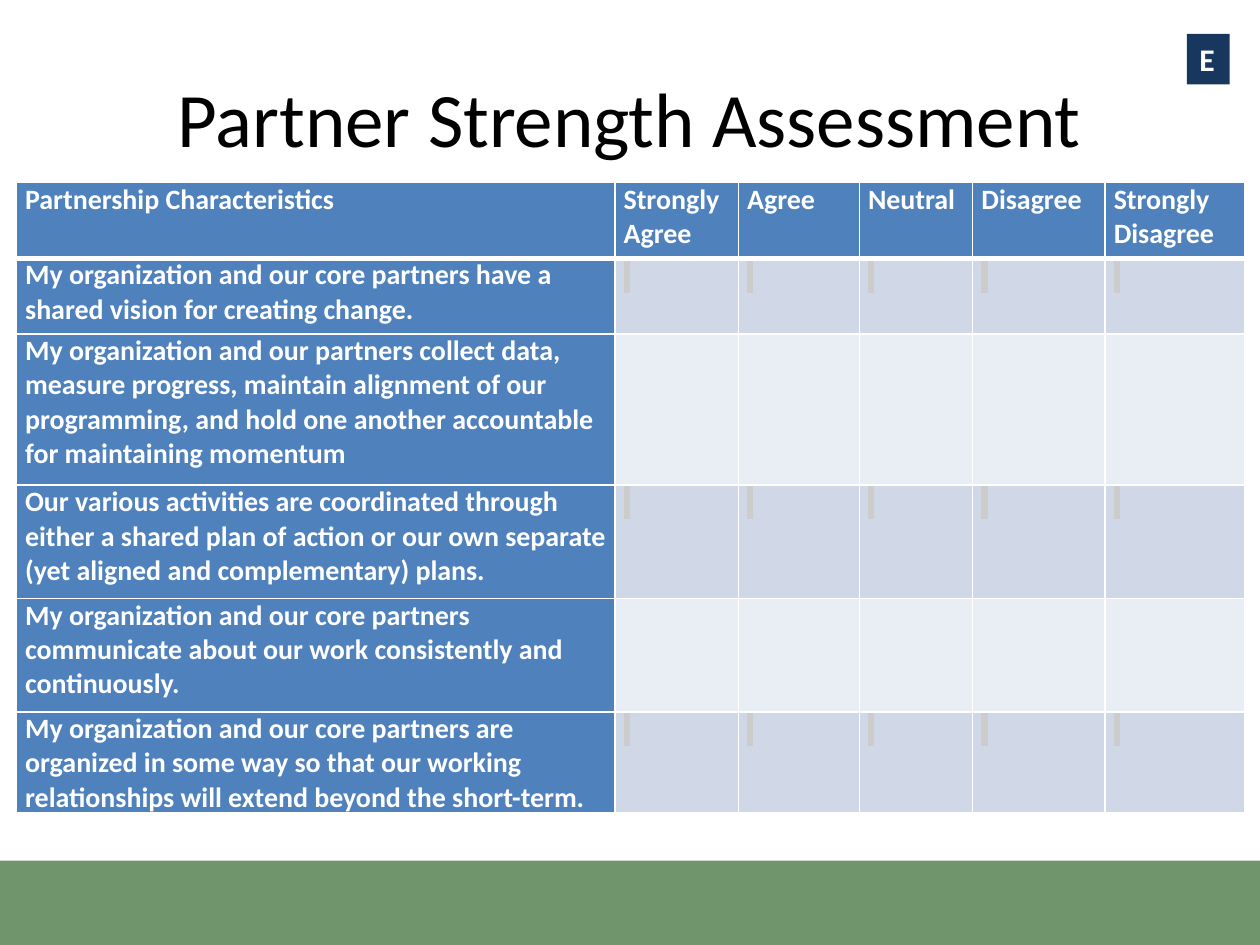
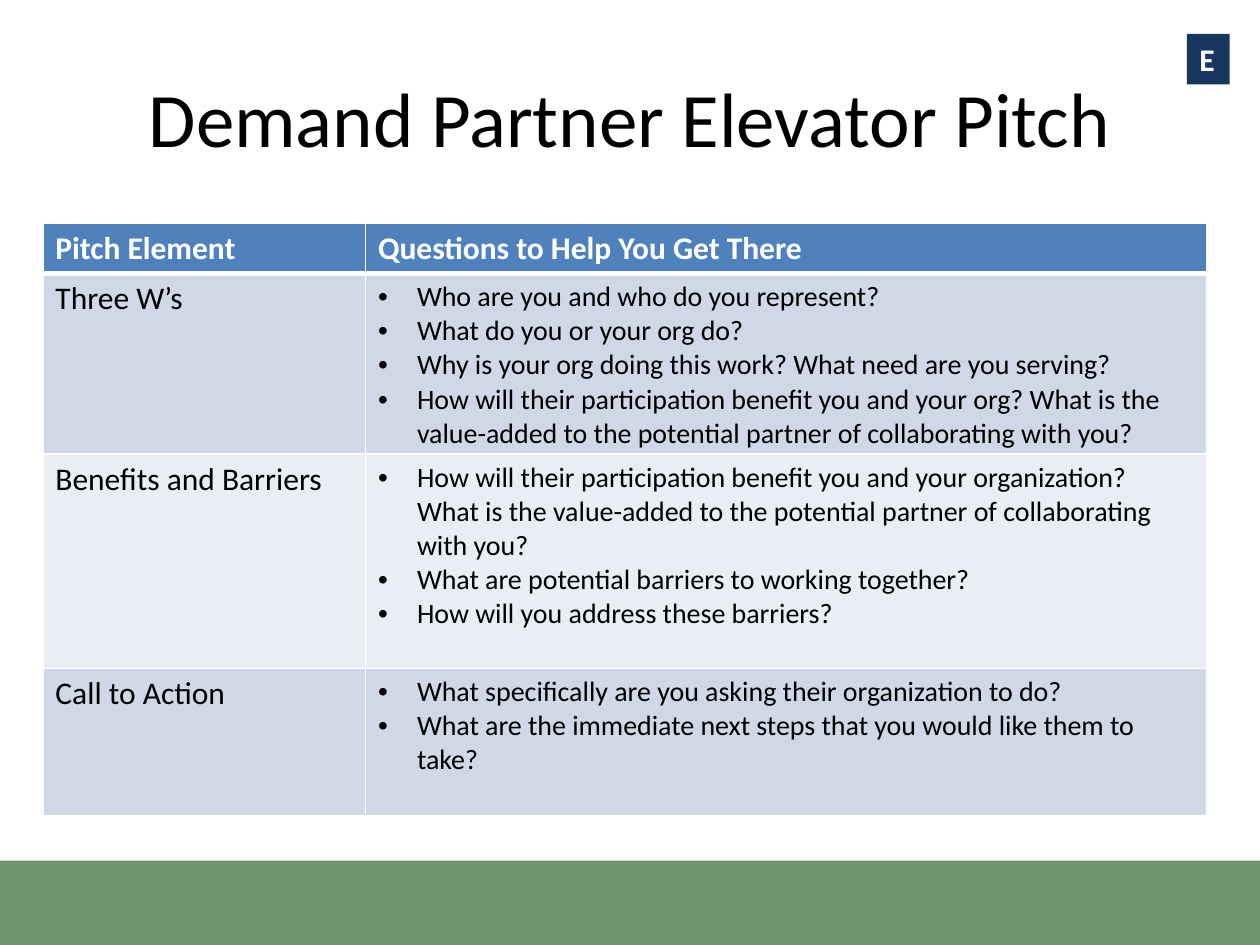
import dataclasses

import lxml.etree
import pptx
import pptx.dml.color
import pptx.enum.shapes
import pptx.enum.text
import pptx.oxml
import pptx.oxml.ns
import pptx.util

Inches = pptx.util.Inches
Pt = pptx.util.Pt
qn = pptx.oxml.ns.qn

# Shared look
FONT = "Calibri"
WHITE, BLACK = "FFFFFF", "000000"
GREEN, NAVY, BLUE = "70946B", "17375E", "4F81BD"
BANDS = ("D0D8E8", "E9EDF4")
MARK = "CCCCCC"


@dataclasses.dataclass
class Style:
    size: float
    color: str = BLACK
    bold: bool = False


@dataclasses.dataclass
class Cell:
    lines: list[str]
    style: Style
    fill: str
    bullets: bool = False
    marked: bool = False


@dataclasses.dataclass
class Grid:
    left: float
    top: float
    widths: list[float]
    heights: list[float]
    rows: list[list[Cell]]
    margins: tuple[float, float]


TITLE = Style(44)
BADGE = Style(18, WHITE, True)
LABEL = Style(16, WHITE, True)
HEADING = Style(18, WHITE, True)
ELEMENT = Style(18)
QUESTION = Style(16)


def rgb(color: str) -> pptx.dml.color.RGBColor:
    return pptx.dml.color.RGBColor.from_string(color)


def format_runs(p, style: Style) -> None:
    for r in p.runs:
        r.font.name = FONT
        r.font.size = Pt(style.size)
        r.font.bold = style.bold
        r.font.color.rgb = rgb(style.color)


def add_box(slide, left: float, top: float, width: float, height: float, color: str):
    sp = slide.shapes.add_shape(
        pptx.enum.shapes.MSO_SHAPE.RECTANGLE,
        Inches(left), Inches(top), Inches(width), Inches(height))
    sp.shadow.inherit = False
    sp.fill.solid()
    sp.fill.fore_color.rgb = rgb(color)
    sp.line.fill.background()
    return sp


def add_frame(prs, title: str):
    """Start a slide with the green band, title and corner badge."""
    slide = prs.slides.add_slide(prs.slide_layouts[6])
    add_box(slide, 0, 6.83, 10, 0.67, GREEN)

    sp = slide.shapes.add_textbox(Inches(0.5), Inches(0.3), Inches(9), Inches(1.25))
    tf = sp.text_frame
    tf.word_wrap = True
    tf.vertical_anchor = pptx.enum.text.MSO_ANCHOR.MIDDLE
    tf.text = title
    tf.paragraphs[0].alignment = pptx.enum.text.PP_ALIGN.CENTER
    format_runs(tf.paragraphs[0], TITLE)

    tf = add_box(slide, 9.42, 0.27, 0.34, 0.4, NAVY).text_frame
    tf.vertical_anchor = pptx.enum.text.MSO_ANCHOR.TOP
    tf.text = "E"
    tf.paragraphs[0].alignment = pptx.enum.text.PP_ALIGN.LEFT
    format_runs(tf.paragraphs[0], BADGE)
    return slide


def add_bullet(p) -> None:
    pPr = p._p.get_or_add_pPr()
    pPr.set("marL", str(Inches(0.31)))
    pPr.set("indent", str(-Inches(0.31)))
    lxml.etree.SubElement(pPr, qn("a:buFont"), typeface="Arial")
    lxml.etree.SubElement(pPr, qn("a:buChar"), char="•")


def highlight(r, color: str) -> None:
    mark = lxml.etree.Element(qn("a:highlight"))
    lxml.etree.SubElement(mark, qn("a:srgbClr"), val=color)
    r.font._element.find(qn("a:solidFill")).addnext(mark)


def set_borders(cell, top: float, bottom: float) -> None:
    tcPr = cell._tc.get_or_add_tcPr()
    for side, width in (("L", 1), ("R", 1), ("T", top), ("B", bottom)):
        ln = lxml.etree.SubElement(tcPr, qn(f"a:ln{side}"), w=str(Pt(width)))
        fill = lxml.etree.SubElement(ln, qn("a:solidFill"))
        lxml.etree.SubElement(fill, qn("a:srgbClr"), val=WHITE)


def fill_cell(cell, content: Cell, row: int, margins: tuple[float, float]) -> None:
    cell.margin_left = cell.margin_right = Inches(margins[0])
    cell.margin_top = cell.margin_bottom = Inches(margins[1])
    # The rule under the heading row is thicker than the others
    set_borders(cell, top=3 if row == 1 else 1, bottom=3 if row == 0 else 1)
    cell.fill.solid()
    cell.fill.fore_color.rgb = rgb(content.fill)
    tf = cell.text_frame
    tf.text = "\n".join(content.lines)
    for p in tf.paragraphs:
        if content.bullets:
            add_bullet(p)
        format_runs(p, content.style)
        if content.marked:
            highlight(p.runs[0], MARK)


def add_grid(slide, grid: Grid) -> None:
    table = slide.shapes.add_table(
        len(grid.heights), len(grid.widths), Inches(grid.left), Inches(grid.top),
        Inches(sum(grid.widths)), Inches(sum(grid.heights))).table
    table.first_row = table.horz_banding = False
    for column, width in zip(table.columns, grid.widths):
        column.width = Inches(width)
    for row, height in zip(table.rows, grid.heights):
        row.height = Inches(height)
    for i, contents in enumerate(grid.rows):
        for j, content in enumerate(contents):
            fill_cell(table.cell(i, j), content, i, grid.margins)


# Slide 1: rating table
RATINGS = ["Strongly Agree", "Agree", "Neutral", "Disagree", "Strongly Disagree"]
CHARACTERISTICS = [
    "My organization and our core partners have a shared vision for creating change.",
    "My organization and our partners collect data, measure progress, maintain "
    "alignment of our programming, and hold one another accountable for "
    "maintaining momentum",
    "Our various activities are coordinated through either a shared plan of action "
    "or our own separate (yet aligned and complementary) plans.",
    "My organization and our core partners communicate about our work consistently "
    "and continuously.",
    "My organization and our core partners are organized in some way so that our "
    "working relationships will extend beyond the short-term.",
]

# Slide 2: pitch elements and their questions
PITCH = {
    "Three W’s": [
        "Who are you and who do you represent?",
        "What do you or your org do?",
        "Why is your org doing this work? What need are you serving?",
        "How will their participation benefit you and your org? What is the "
        "value-added to the potential partner of collaborating with you?",
    ],
    "Benefits and Barriers": [
        "How will their participation benefit you and your organization? What is the "
        "value-added to the potential partner of collaborating with you?",
        "What are potential barriers to working together?",
        "How will you address these barriers?",
    ],
    "Call to Action": [
        "What specifically are you asking their organization to do?",
        "What are the immediate next steps that you would like them to take?",
    ],
}


def assessment_grid() -> Grid:
    rows = [[Cell([t], LABEL, BLUE) for t in ["Partnership Characteristics", *RATINGS]]]
    for i, text in enumerate(CHARACTERISTICS):
        # Answer cells in the darker bands carry a small grey mark
        marked = i % 2 == 0
        answer = Cell([" "] if marked else [], LABEL, BANDS[i % 2], marked=marked)
        rows.append([Cell([text], LABEL, BLUE)] + [answer] * len(RATINGS))
    return Grid(0.13, 1.45, [4.75, 0.98, 0.96, 0.9, 1.05, 1.11],
                [0.6, 0.6, 1.2, 0.9, 0.9, 0.8], rows, (0.07, 0))


def pitch_grid() -> Grid:
    headings = ["Pitch Element", "Questions to Help You Get There"]
    rows = [[Cell([t], HEADING, BLUE) for t in headings]]
    for i, (element, questions) in enumerate(PITCH.items()):
        fill = BANDS[i % 2]
        rows.append([Cell([element], ELEMENT, fill),
                     Cell(questions, QUESTION, fill, bullets=True)])
    return Grid(0.34, 1.77, [2.56, 6.68], [0.39, 1.43, 1.7, 1.17], rows, (0.1, 0.05))


def main() -> None:
    prs = pptx.Presentation()
    prs.slide_width, prs.slide_height = Inches(10), Inches(7.5)
    add_grid(add_frame(prs, "Partner Strength Assessment"), assessment_grid())
    add_grid(add_frame(prs, "Demand Partner Elevator Pitch"), pitch_grid())
    prs.save("out.pptx")


if __name__ == "__main__":
    main()
